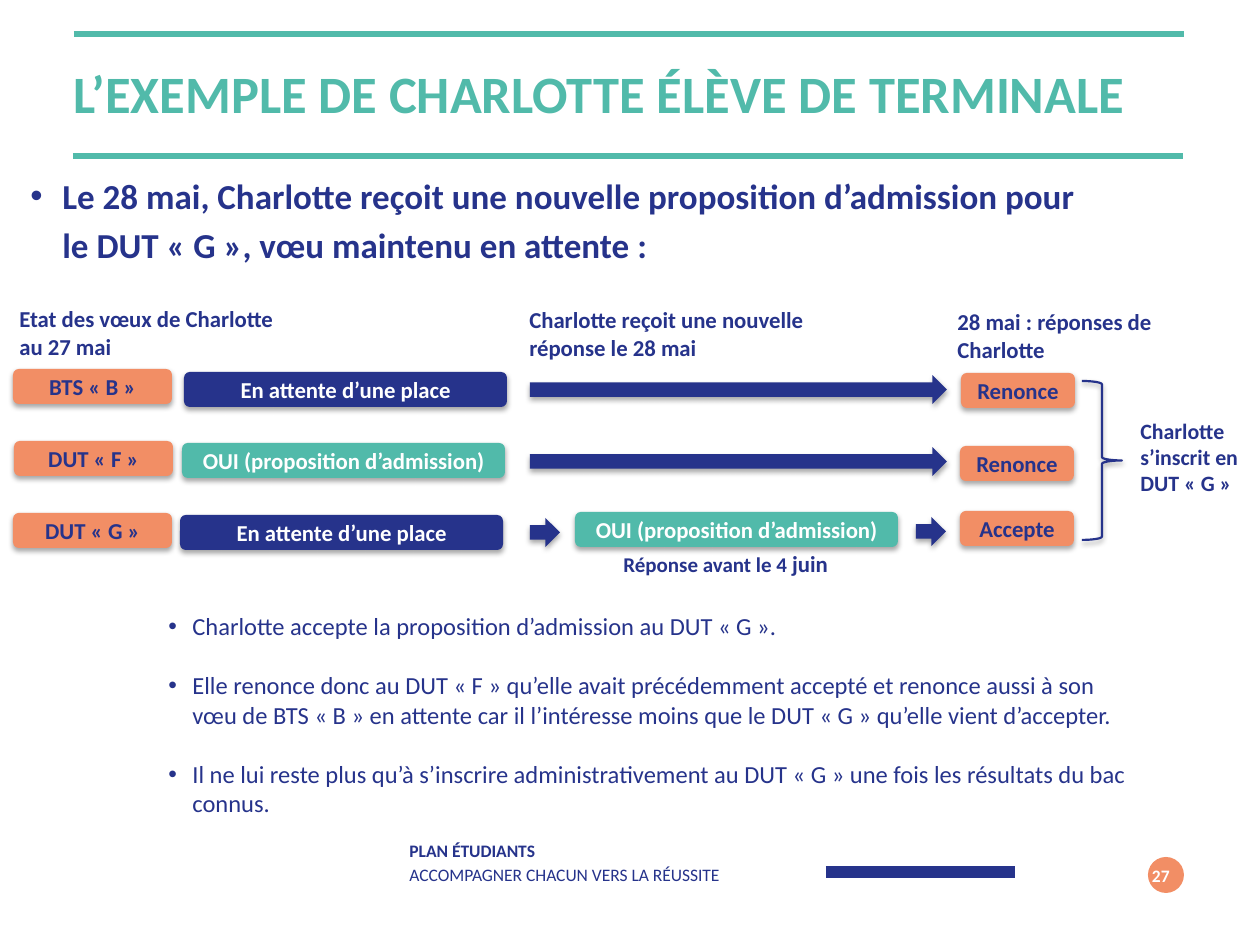
from lxml import etree
from pptx import Presentation
from pptx import util as u
from pptx.dml.color import RGBColor
from pptx.enum import shapes, text
from pptx.oxml.ns import qn

SCALE = 914400 / 126
FONT = "Calibri"
HUES = {"navy": "26338B", "teal": "51BAAA", "coral": "F28E65", "white": "FFFFFF"}
KINDS = shapes.MSO_SHAPE
LEFT, MID, RIGHT = text.PP_ALIGN.LEFT, text.PP_ALIGN.CENTER, text.PP_ALIGN.RIGHT


def px(*nums):
    return [u.Emu(round(n * SCALE)) for n in nums]


def hue(name):
    return RGBColor.from_string(HUES[name])


def style(para, size, color, bold, align=LEFT):
    para.alignment = align
    font = para.font
    font.name, font.size, font.bold = FONT, u.Pt(size), bold
    font.color.rgb = hue(color)


def indent(para, width, bullet=True):
    """Hang the paragraph by width px, with a bullet if asked."""
    props = para._p.get_or_add_pPr()
    gap = px(width)[0]
    props.set("marL", str(gap))
    if bullet:
        props.set("indent", str(-gap))
        face = etree.SubElement(props, qn("a:buFont"))
        face.set("typeface", "Arial")
        etree.SubElement(props, qn("a:buChar")).set("char", "•")


def add_text(slide, at, lines, size, color="navy", bold=True, align=LEFT, mid=False):
    """Add a wrapped text box and return its paragraphs."""
    frame = slide.shapes.add_textbox(*px(*at)).text_frame
    frame.word_wrap = True
    if mid:
        frame.vertical_anchor = text.MSO_ANCHOR.MIDDLE
    for i, line in enumerate(lines):
        para = frame.add_paragraph() if i else frame.paragraphs[0]
        para.text = line
        style(para, size, color, bold, align)
    return frame.paragraphs


def add_list(slide, at, lines, size, hang, gap, bold, marks):
    paras = add_text(slide, at, lines, size, bold=bold)
    for i, (para, mark) in enumerate(zip(paras, marks)):
        indent(para, hang, mark)
        style(para, size, "navy", bold)
        if i:
            para.space_before = u.Pt(gap)


def add_line(slide, x1, x2, y, color, width):
    line = slide.shapes.add_connector(shapes.MSO_CONNECTOR.STRAIGHT, *px(x1, y, x2, y))
    line.line.color.rgb = hue(color)
    line.line.width = u.Pt(width)
    etree.SubElement(line._element.spPr, qn("a:effectLst"))


def add_shade(shape):
    """Give the shape a soft shadow straight below it."""
    shape.shadow.inherit = False
    fx = shape._element.spPr.find(qn("a:effectLst"))
    shade = etree.SubElement(fx, qn("a:outerShdw"), blurRad=str(u.Pt(3.1)),
                             dist=str(u.Pt(1.8)), dir="5400000", rotWithShape="0")
    tint = etree.SubElement(shade, qn("a:srgbClr"), val="000000")
    etree.SubElement(tint, qn("a:alpha"), val="35000")


def add_form(slide, kind, at, color):
    form = slide.shapes.add_shape(kind, *px(*at))
    form.shadow.inherit = False
    form.fill.solid()
    form.fill.fore_color.rgb = hue(color)
    form.line.fill.background()
    return form


def add_pill(slide, at, label, color):
    pill = add_form(slide, KINDS.ROUNDED_RECTANGLE, at, color)
    add_shade(pill)
    frame = pill.text_frame
    frame.margin_left = frame.margin_right = 0
    frame.vertical_anchor = text.MSO_ANCHOR.MIDDLE
    para = frame.paragraphs[0]
    para.text = label
    style(para, 13, "navy" if color == "coral" else "white", True, MID)


def add_arrow(slide, x, y, width):
    add_shade(add_form(slide, KINDS.RIGHT_ARROW, (x, y, width, 29), "navy"))


def add_brace(slide, at):
    brace = slide.shapes.add_shape(KINDS.RIGHT_BRACE, *px(*at))
    brace.fill.background()
    brace.line.color.rgb = hue("navy")
    brace.line.width = u.Pt(1.25)
    add_shade(brace)


def add_frame(slide):
    """Rules, title, footer and page number."""
    add_line(slide, 74, 1184, 34, "teal", 3.25)
    add_line(slide, 73, 1183, 156, "teal", 3.25)
    add_line(slide, 826, 1015, 872, "navy", 7.25)
    title = add_text(slide, (61, 11, 1100, 178),
                     ["L’EXEMPLE DE CHARLOTTE ÉLÈVE DE TERMINALE"], 30, "teal", mid=True)[0]
    title.line_spacing = u.Pt(28)
    foot = add_text(slide, (397, 815, 636, 93),
                    ["PLAN ÉTUDIANTS\vACCOMPAGNER CHACUN VERS LA RÉUSSITE"], 10, mid=True)[0]
    foot.line_spacing = u.Pt(13.2)
    foot.runs[1].font.bold = False
    add_form(slide, KINDS.OVAL, (1148, 857, 36, 36), "coral")
    add_text(slide, (1120, 851, 62, 50), ["27"], 10, "white", align=RIGHT, mid=True)


def add_wishes(slide):
    """One row per wish: name, state, answer."""
    wait, yes = ("En attente d’une place", "navy"), ("OUI (proposition d’admission)", "teal")
    rows = [
        ((13, 369), "BTS « B »", (184, 372), wait, (961, 373), "Renonce"),
        ((14, 441), "DUT « F »", (182, 443), yes, (960, 446), "Renonce"),
        ((13, 513), "DUT « G »", (180, 515), wait, (960, 511), "Accepte"),
    ]
    for spot, name, place, state, end, reply in rows:
        add_pill(slide, (*spot, 159, 35), name, "coral")
        add_pill(slide, (*place, 323, 35), *state)
        add_pill(slide, (*end, 114, 35), reply, "coral")
    add_pill(slide, (575, 512, 323, 35), *yes)
    for x, y, width in [(530, 375, 417), (530, 447, 417), (530, 518, 30), (916, 517, 30)]:
        add_arrow(slide, x, y, width)
    add_brace(slide, (1082, 381, 40, 159))


def add_labels(slide):
    for at, label, size in [
        ((7, 299, 290, 68), "Etat des vœux de Charlotte au 27 mai", 13),
        ((517, 300, 340, 68), "Charlotte reçoit une nouvelle réponse le 28 mai", 13),
        ((945, 302, 258, 68), "28 mai : réponses de Charlotte", 13),
        ((1128, 411, 130, 92), "Charlotte s’inscrit en DUT « G »", 12.5),
    ]:
        add_text(slide, at, [label], size)
    note = add_text(slide, (611, 544, 268, 40), ["Réponse avant le 4 "], 12)[0]
    last = note.add_run()
    last.text = "juin"
    last.font.size = u.Pt(13)


def main():
    deck = Presentation()
    deck.slide_width, deck.slide_height = px(1260, 945)
    slide = deck.slides.add_slide(deck.slide_layouts[6])
    add_frame(slide)
    add_list(slide, (18, 168, 1200, 110), [
        "Le 28 mai, Charlotte reçoit une nouvelle proposition d’admission pour",
        "le DUT « G », vœu maintenu en attente :",
    ], 20, 32, 4, True, [True, False])
    add_wishes(slide)
    add_labels(slide)
    add_list(slide, (156, 605, 997, 218), [
        "Charlotte accepte la proposition d’admission au DUT « G ».",
        "Elle renonce donc au DUT « F » qu’elle avait précédemment accepté et renonce aussi "
        "à son vœu de BTS « B » en attente car il l’intéresse moins que le DUT « G » "
        "qu’elle vient d’accepter.",
        "Il ne lui reste plus qu’à s’inscrire administrativement au DUT « G » une fois "
        "les résultats du bac connus.",
    ], 14, 24, 17, False, [True] * 3)
    deck.save("out.pptx")


if __name__ == "__main__":
    main()
